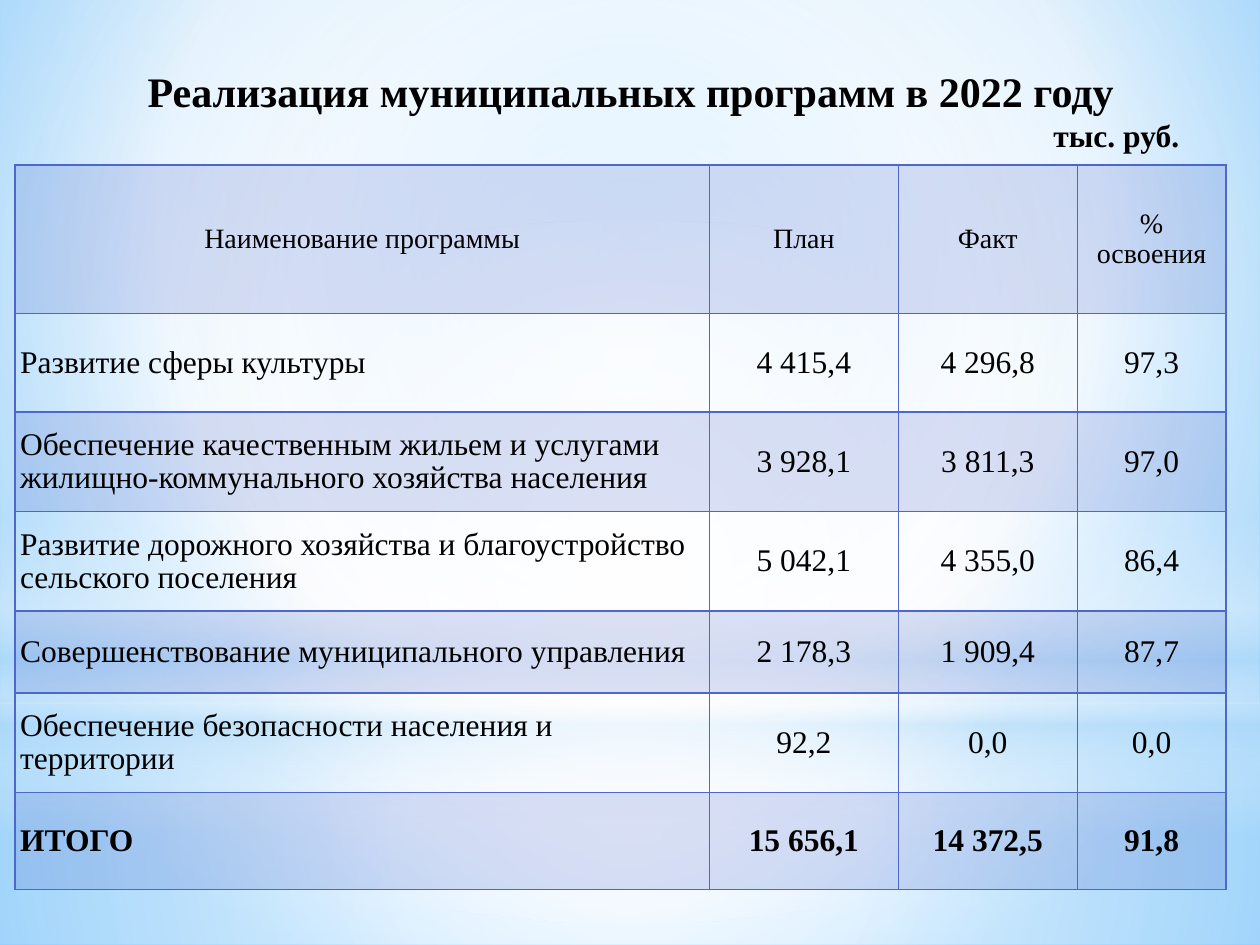
from pptx import Presentation
from pptx.dml.color import RGBColor
from pptx.enum.shapes import MSO_SHAPE
from pptx.enum.text import MSO_ANCHOR, MSO_AUTO_SIZE, PP_ALIGN
from pptx.oxml.ns import qn
from pptx.util import Inches, Pt
from lxml.etree import SubElement

WIDTH, HEIGHT = 10, 7.5
FONT = "Times New Roman"
ACCENT, WHITE, SKY = "4E67C8", "FFFFFF", "B4DCFA"
CENTRE = (50, 50, 50, 50)

COLUMNS = (5.51, 1.5, 1.42, 1.18)
ROWS = (1.18, 0.78, 0.79, 0.79, 0.65, 0.79, 0.77)
PROGRAMMES = (
    ("Наименование программы", "План", "Факт", "% освоения"),
    ("Развитие сферы культуры", "4 415,4", "4 296,8", "97,3"),
    ("Обеспечение качественным жильем и услугами жилищно-коммунального хозяйства населения",
     "3 928,1", "3 811,3", "97,0"),
    ("Развитие дорожного хозяйства и благоустройство сельского поселения",
     "5 042,1", "4 355,0", "86,4"),
    ("Совершенствование муниципального управления", "2 178,3", "1 909,4", "87,7"),
    ("Обеспечение безопасности населения и территории", "92,2", "0,0", "0,0"),
    ("ИТОГО", "15 656,1", "14 372,5", "91,8"),
)

GLOWS = (
    (MSO_SHAPE.RECTANGLE, 0.744, 0.256,
     ((0, WHITE, 91), (37, WHITE, 76), (100, SKY, 79)), CENTRE),
    (MSO_SHAPE.RECTANGLE, 0, 0.744,
     ((0, WHITE, 89), (48, WHITE, 62), (100, SKY, 79)), CENTRE),
    (MSO_SHAPE.RECTANGLE, 0.549, 0.333,
     ((0, WHITE, 0), (29, WHITE, 30), (45, SKY, 40),
      (55, WHITE, 26), (65, SKY, 60), (100, WHITE, 0)), None),
    (MSO_SHAPE.OVAL, 0.233, 0.744, ((0, WHITE, 100), (56, WHITE, 0)), CENTRE),
)


def color(value):
    return RGBColor.from_string(value)


def add_color(parent, value, opacity=100):
    tint = SubElement(parent, qn("a:srgbClr"), val=value)
    if opacity < 100:
        SubElement(tint, qn("a:alpha"), val=str(opacity * 1000))


def apply_gradient(fill, properties, stops, focus):
    fill.solid()
    solid = properties.find(qn("a:solidFill"))
    gradient = SubElement(properties, qn("a:gradFill"), rotWithShape="1")
    properties.replace(solid, gradient)
    stop_list = SubElement(gradient, qn("a:gsLst"))
    for position, value, opacity in stops:
        stop = SubElement(stop_list, qn("a:gs"), pos=str(position * 1000))
        add_color(stop, value, opacity)
    if focus is None:
        SubElement(gradient, qn("a:lin"), ang="5400000", scaled="0")
    else:
        radial = SubElement(gradient, qn("a:path"), path="circle")
        SubElement(radial, qn("a:fillToRect"),
                   {side: str(share * 1000) for side, share in zip("ltrb", focus)})


def paint_background(slide):
    fill = slide.background.fill
    fill.solid()
    properties = slide.element.find(".//" + qn("p:bgPr"))
    stops = ((0, "9ED5FF", 100), (60, WHITE, 100), (100, "5BB9FF", 100))
    apply_gradient(fill, properties, stops, (20, 10, 20, 60))


def add_glow(slide, outline, top, height, stops, focus):
    glow = slide.shapes.add_shape(outline, 0, Inches(top * HEIGHT),
                                  Inches(WIDTH), Inches(height * HEIGHT))
    glow.shadow.inherit = False
    glow.line.fill.background()
    apply_gradient(glow.fill, glow.element.spPr, stops, focus)


def format_paragraph(paragraph, size, alignment, bold):
    paragraph.alignment = alignment
    for run in paragraph.runs:
        run.font.name = FONT
        run.font.size = Pt(size)
        run.font.bold = bold
        run.font.color.rgb = color("000000")


def place_title(slide):
    title = slide.shapes.title
    title.left, title.top = Inches(0.55), Inches(0.47)
    title.width, title.height = Inches(8.91), Inches(0.47)
    frame = title.text_frame
    frame.text = "Реализация муниципальных программ в 2022 году\nтыс. руб."
    frame.auto_size = MSO_AUTO_SIZE.NONE
    frame.word_wrap = True
    frame.vertical_anchor = MSO_ANCHOR.TOP
    heading, unit = frame.paragraphs
    format_paragraph(heading, 24, PP_ALIGN.CENTER, True)
    format_paragraph(unit, 18, PP_ALIGN.RIGHT, True)
    slide.shapes.element.append(title.element)


def add_borders(cell):
    properties = cell._tc.get_or_add_tcPr()
    for index, side in enumerate(("lnL", "lnR", "lnT", "lnB")):
        border = SubElement(properties, qn(f"a:{side}"), w=str(Pt(1)))
        add_color(SubElement(border, qn("a:solidFill")), ACCENT)
        properties.insert(index, border)


def format_cell(cell, row, column):
    header, total = row == 0, row == len(ROWS) - 1
    cell.vertical_anchor = MSO_ANCHOR.MIDDLE
    side = 0.1 if header else 0.01
    cell.margin_left = Inches(0.04 if column == 0 and not header else side)
    cell.margin_right = Inches(side)
    cell.margin_top = Inches(0.05 if header else 0.01)
    cell.margin_bottom = Inches(0.05 if header else 0)
    if row % 2 == 0:
        cell.fill.solid()
        cell.fill.fore_color.rgb = color(ACCENT)
        tint = cell._tc.tcPr.find(".//" + qn("a:srgbClr"))
        SubElement(tint, qn("a:alpha"), val="20000")
    else:
        cell.fill.background()
    add_borders(cell)
    alignment = PP_ALIGN.CENTER if header or column else PP_ALIGN.LEFT
    paragraph = cell.text_frame.paragraphs[0]
    paragraph.line_spacing = 0.95
    format_paragraph(paragraph, 16 if header else 18, alignment, total)


def add_programme_table(slide):
    table = slide.shapes.add_table(len(ROWS), len(COLUMNS), Inches(0.12), Inches(1.31),
                                   Inches(sum(COLUMNS)), Inches(sum(ROWS))).table
    table.first_row = table.horz_banding = False
    for column, width in zip(table.columns, COLUMNS):
        column.width = Inches(width)
    for row, height in zip(table.rows, ROWS):
        row.height = Inches(height)
    for row, values in enumerate(PROGRAMMES):
        for column, value in enumerate(values):
            cell = table.cell(row, column)
            cell.text_frame.text = value
            format_cell(cell, row, column)


def main():
    deck = Presentation()
    deck.slide_width, deck.slide_height = Inches(WIDTH), Inches(HEIGHT)
    slide = deck.slides.add_slide(deck.slide_layouts[5])
    paint_background(slide)
    for glow in GLOWS:
        add_glow(slide, *glow)
    place_title(slide)
    add_programme_table(slide)
    deck.save("out.pptx")


if __name__ == "__main__":
    main()
